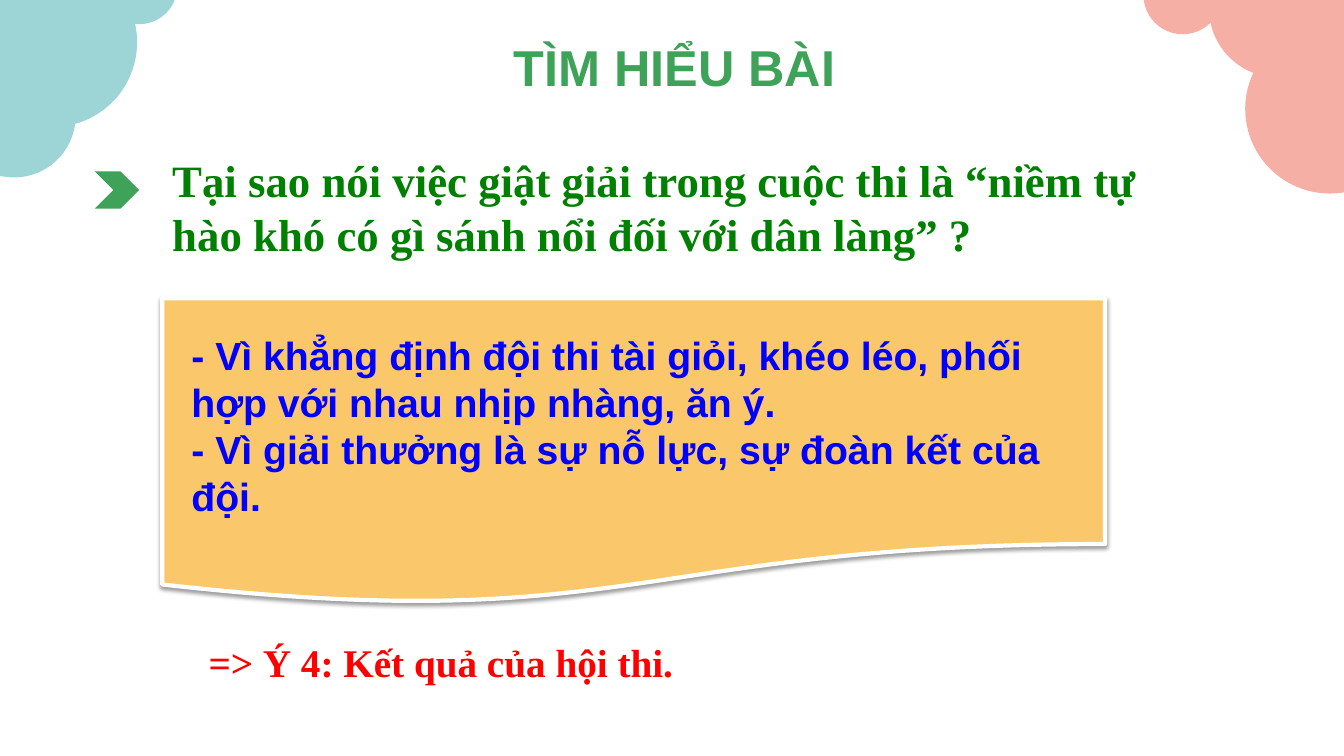
from lxml import etree
from pptx import Presentation
from pptx.dml.color import RGBColor
from pptx.enum.shapes import MSO_SHAPE
from pptx.enum.text import MSO_ANCHOR, MSO_AUTO_SIZE, PP_ALIGN
from pptx.oxml.ns import qn
from pptx.util import Inches, Pt

ELLIPSE = MSO_SHAPE.OVAL
CHEVRON = MSO_SHAPE.CHEVRON
DOCUMENT = MSO_SHAPE.FLOWCHART_DOCUMENT
MIDDLE = MSO_ANCHOR.MIDDLE
TOP = MSO_ANCHOR.TOP
LEFT = PP_ALIGN.LEFT
CENTER = PP_ALIGN.CENTER
FIT_SHAPE = MSO_AUTO_SIZE.SHAPE_TO_FIT_TEXT

GREEN = "3EA258"
TEAL_CIRCLES = [(-0.32, -0.42, 1.68), (-0.47, 0.54, 1.22), (1, -0.52, 0.76)]
PINK_CIRCLES = [(0.65, -0.61, 1.38), (1.01, 0.24, 1.68), (0, -0.44, 0.78)]


def color(value):
    """Turn a hex string into a colour."""
    return RGBColor.from_string(value)


def add_filled_shape(slide, kind, box, fill):
    """Add a flat preset shape without outline."""
    shape = slide.shapes.add_shape(kind, *(Inches(length) for length in box))
    shape.shadow.inherit = False
    shape.fill.solid()
    shape.fill.fore_color.rgb = color(fill)
    shape.line.fill.background()
    return shape


def add_text(slide, box, lines, size, font_name, font_color, align=LEFT):
    """Add a bold text box with one paragraph for each line."""
    text_box = slide.shapes.add_textbox(*(Inches(length) for length in box))
    text_frame = text_box.text_frame
    text_frame.word_wrap = True
    text_frame.auto_size = FIT_SHAPE
    text_frame.vertical_anchor = TOP
    text_frame.text = "\n".join(lines)
    for paragraph in text_frame.paragraphs:
        paragraph.alignment = align
        for run in paragraph.runs:
            run.font.size = Pt(size)
            run.font.name = font_name
            run.font.bold = True
            run.font.color.rgb = color(font_color)
    return text_frame


def add_soft_shadow(shape):
    """Give the shape a soft shadow falling straight down."""
    effects = shape.element.spPr.find(qn("a:effectLst"))
    shadow = etree.SubElement(
        effects, qn("a:outerShdw"), blurRad=str(Pt(3.1)), dist=str(Pt(1.6)),
        dir="5400000", rotWithShape="0")
    shade = etree.SubElement(shadow, qn("a:srgbClr"), val="000000")
    etree.SubElement(shade, qn("a:alpha"), val="38000")


def add_cloud(slide, left, top, circles, fill):
    """Build a corner cloud from overlapping circles."""
    for x, y, diameter in circles:
        box = (left + x, top + y, diameter, diameter)
        add_filled_shape(slide, ELLIPSE, box, fill)


def add_title(slide, box):
    """Add the centred heading."""
    text_frame = add_text(slide, box, ["TÌM HIỂU BÀI"], 36, "Arial", GREEN, CENTER)
    text_frame.word_wrap = False
    text_frame.vertical_anchor = MIDDLE
    text_frame.margin_left = text_frame.margin_right = Inches(0.07)
    text_frame.margin_top = text_frame.margin_bottom = Inches(0.04)


def add_question(slide, left, top, width, height):
    """Add the question with its chevron marker on the left."""
    question = ("Tại sao nói việc giật giải trong cuộc thi là “niềm tự hào "
                "khó có gì sánh nổi đối với dân làng” ?")
    add_text(slide, (left, top, width, height), [question], 32,
             "Times New Roman", "008000")
    add_filled_shape(slide, CHEVRON, (left - 0.67, top + 0.23, 0.44, 0.37), GREEN)


def add_answer(slide, left, top, width, height):
    """Add the answer on a wavy document panel."""
    panel = add_filled_shape(slide, DOCUMENT, (left, top, width, height), "FAC86A")
    panel.line.color.rgb = color("FFFFFF")
    panel.line.width = Pt(3)
    add_soft_shadow(panel)
    answers = [
        "- Vì khẳng định đội thi tài giỏi, khéo léo, phối hợp với nhau nhịp nhàng, ăn ý.",
        "- Vì giải thưởng là sự nỗ lực, sự đoàn kết của đội.",
    ]
    add_text(slide, (left + 0.19, top + 0.28, width - 0.61, height - 1.05),
             answers, 28, "Arial", "0000FF")


def add_conclusion(slide, box):
    """Add the concluding idea."""
    add_text(slide, box, ["=> Ý 4: Kết quả của hội thi."], 28,
             "Times New Roman", "FF0000")


def main():
    """Build and save the slide."""
    presentation = Presentation()
    presentation.slide_width = Inches(13.33)
    presentation.slide_height = Inches(7.5)
    slide = presentation.slides.add_slide(presentation.slide_layouts[6])
    add_cloud(slide, 0, 0, TEAL_CIRCLES, "9DD4D6")
    add_cloud(slide, 11.34, 0, PINK_CIRCLES, "F5AFA5")
    add_title(slide, (5, 0.32, 3.38, 0.68))
    add_question(slide, 1.61, 1.47, 10.54, 1.18)
    add_answer(slide, 1.61, 2.96, 9.35, 3.04)
    add_conclusion(slide, (1.97, 6.28, 9.44, 0.57))
    presentation.save("out.pptx")


if __name__ == "__main__":
    main()
